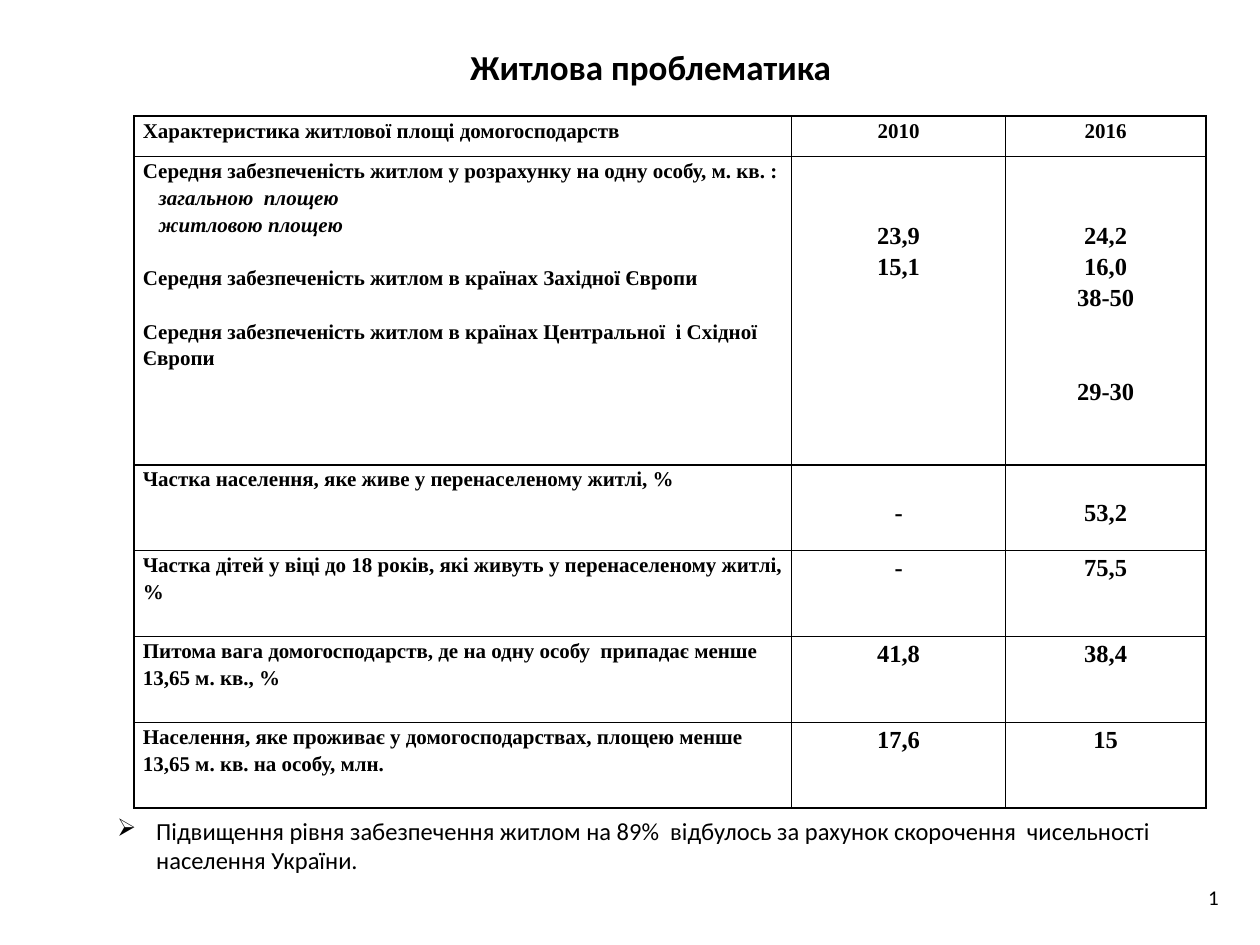
from pptx import Presentation
from pptx.dml.color import RGBColor
from pptx.enum.text import MSO_ANCHOR, PP_ALIGN
from pptx.oxml.ns import qn
from pptx.util import Cm, Pt
from lxml.etree import SubElement

COLORS = {"text": "000000", "border": "000000", "background": "FFFFFF"}
BODY_FONT, TABLE_FONT = "Calibri", "Times New Roman"

TITLE = "Житлова проблематика"
CONCLUSION = ("Підвищення рівня забезпечення житлом на 89%  відбулось за рахунок "
              "скорочення  чисельності населення України.")
PAGE_NUMBER = "1"

HOUSING_ITEMS = [
    {"text": "Середня забезпеченість житлом у розрахунку на одну особу, м. кв. :"},
    {"text": "загальною  площею", "italic": True, "indent": 0.32},
    {"text": "житловою площею", "italic": True, "indent": 0.32},
    {"text": "Середня забезпеченість житлом в країнах Західної Європи", "before": 15.3},
    {"text": "Середня забезпеченість житлом в країнах Центральної  і Східної Європи",
     "before": 15.3},
]
HOUSING_2010 = [{"text": "23,9"}, {"text": "15,1"}]
HOUSING_2016 = [{"text": "24,2"}, {"text": "16,0"}, {"text": "38-50"},
                {"text": "29-30", "before": 35.8}]

ROWS = [
    {"height": 0.81, "value_size": 12, "value_top": 0, "cells": [
        "Характеристика житлової площі домогосподарств", "2010", "2016"]},
    {"height": 6.22, "value_size": 14, "value_top": 1.26, "cells": [
        HOUSING_ITEMS, HOUSING_2010, HOUSING_2016]},
    {"height": 1.73, "value_size": 14, "value_top": 0.63, "cells": [
        "Частка населення, яке живе у перенаселеному житлі, %", "-", "53,2"]},
    {"height": 1.73, "value_size": 14, "value_top": 0, "cells": [
        "Частка дітей у віці до 18 років, які живуть у перенаселеному житлі, %",
        "-", "75,5"]},
    {"height": 1.73, "value_size": 14, "value_top": 0, "cells": [
        "Питома вага домогосподарств, де на одну особу  припадає менше 13,65 м. кв., %",
        "41,8", "38,4"]},
    {"height": 1.73, "value_size": 14, "value_top": 0, "cells": [
        "Населення, яке проживає у домогосподарствах, площею менше "
        "13,65 м. кв. на особу, млн.", "17,6", "15"]},
]
COLUMN_WIDTHS = [13.26, 4.31, 4.04]


def set_attributes(target, values):
    for name, value in values.items():
        setattr(target, name, value)


def write(paragraph, text, size, font=BODY_FONT, align=PP_ALIGN.LEFT, **styles):
    paragraph.alignment = align
    run = paragraph.add_run()
    run.text = text
    set_attributes(run.font, {"name": font, "size": Pt(size), **styles})
    run.font.color.rgb = RGBColor.from_string(COLORS["text"])


def format_frame(frame, **values):
    set_attributes(frame, {"word_wrap": True, "vertical_anchor": MSO_ANCHOR.MIDDLE, **values})


def place(shape, left, top, width, height):
    set_attributes(shape, {"left": Cm(left), "top": Cm(top),
                           "width": Cm(width), "height": Cm(height)})


def add_text_box(slide, *box):
    shape = slide.shapes.add_textbox(*map(Cm, box))
    format_frame(shape.text_frame)
    return shape.text_frame.paragraphs[0]


def indent_paragraph(paragraph, left, first=0):
    properties = paragraph._p.get_or_add_pPr()
    properties.set("marL", str(Cm(left)))
    properties.set("indent", str(Cm(first)))
    return properties


def add_borders(cell):
    properties = cell._tc.get_or_add_tcPr()
    for position, side in enumerate(("lnL", "lnR", "lnT", "lnB")):
        line = properties.makeelement(qn(f"a:{side}"), {"w": str(Pt(1))})
        fill = SubElement(line, qn("a:solidFill"))
        SubElement(fill, qn("a:srgbClr"), val=COLORS["border"])
        properties.insert(position, line)


def fill_cell(cell, content, size, align, top):
    set_attributes(cell, {"margin_left": Cm(0.18), "margin_right": Cm(0.18),
                          "margin_top": Cm(top), "margin_bottom": 0,
                          "vertical_anchor": MSO_ANCHOR.TOP})
    cell.fill.background()
    add_borders(cell)
    items = [{"text": content}] if isinstance(content, str) else content
    frame = cell.text_frame
    for index, item in enumerate(items):
        paragraph = frame.add_paragraph() if index else frame.paragraphs[0]
        set_attributes(paragraph, {"line_spacing": 1.15,
                                   "space_before": Pt(item.get("before", 0))})
        if "indent" in item:
            indent_paragraph(paragraph, item["indent"])
        write(paragraph, item["text"], size, TABLE_FONT, align,
              bold=True, italic=item.get("italic", False))


def add_housing_table(slide):
    total_height = sum(row["height"] for row in ROWS)
    table = slide.shapes.add_table(len(ROWS), len(COLUMN_WIDTHS), Cm(2.7), Cm(2.34),
                                   Cm(sum(COLUMN_WIDTHS)), Cm(total_height)).table
    set_attributes(table, {"first_row": False, "horz_banding": False})
    for column, width in zip(table.columns, COLUMN_WIDTHS):
        column.width = Cm(width)
    for row, values in zip(table.rows, ROWS):
        row.height = Cm(values["height"])
        for index, (cell, content) in enumerate(zip(row.cells, values["cells"])):
            if index:
                fill_cell(cell, content, values["value_size"], PP_ALIGN.CENTER,
                          values["value_top"])
            else:
                fill_cell(cell, content, 12, PP_ALIGN.LEFT, 0)


def main():
    presentation = Presentation()
    set_attributes(presentation, {"slide_width": Cm(25.4), "slide_height": Cm(19.05)})
    slide = presentation.slides.add_slide(presentation.slide_layouts[5])
    slide.background.fill.solid()
    slide.background.fill.fore_color.rgb = RGBColor.from_string(COLORS["background"])

    title = slide.shapes.title
    place(title, 2.11, 0.76, 22.02, 1.17)
    format_frame(title.text_frame)
    write(title.text_frame.paragraphs[0], TITLE, 20, align=PP_ALIGN.CENTER, bold=True)

    add_housing_table(slide)

    number = add_text_box(slide, 22.71, 17.58, 2.11, 1.02)
    write(number, PAGE_NUMBER, 12, align=PP_ALIGN.RIGHT)

    conclusion = add_text_box(slide, 2.11, 16.31, 21.79, 1.45)
    write(conclusion, CONCLUSION, 14)
    SubElement(indent_paragraph(conclusion, 0.79, -0.79), qn("a:buChar"), char="➢")

    presentation.save("out.pptx")


if __name__ == "__main__":
    main()
